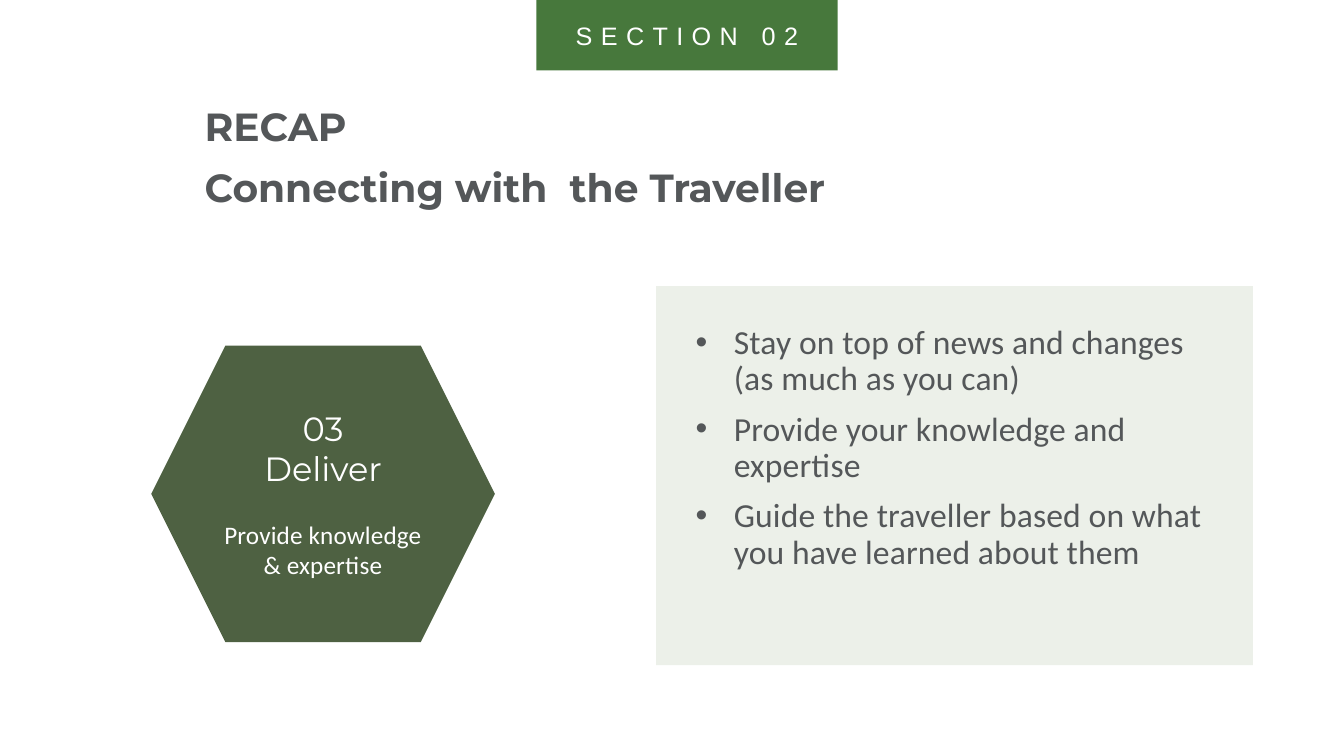
from lxml import etree
from pptx import Presentation
from pptx import util as u
from pptx.dml.color import RGBColor
from pptx.enum import shapes, text
from pptx.oxml.ns import qn

COLUMN = ROW = u.Inches(0.1)
SLIDE_COLUMNS, SLIDE_ROWS = 133.33, 75
WHITE, SLATE = "FFFFFF", "545759"
FOREST, GREEN, MIST = "4E6142", "47783C", "ECF0E9"


def colour(value):
    return RGBColor.from_string(value)


def grid(left, top, width, height):
    return [int(size) for size in (left * COLUMN, top * ROW, width * COLUMN, height * ROW)]


def add_panel(page, kind, box, fill):
    panel = page.shapes.add_shape(kind, *box)
    panel.shadow.inherit = False
    panel.fill.solid()
    panel.fill.fore_color.rgb = colour(fill)
    panel.line.fill.background()
    return panel


def set_frame(frame, anchor, inset=None):
    frame.word_wrap = True
    frame.vertical_anchor = anchor
    if inset is not None:
        margin = int(inset * COLUMN)
        frame.margin_left = frame.margin_right = margin
        frame.margin_top = frame.margin_bottom = margin


def style(para, font, size, ink, align, bold=False, tracking=0):
    para.alignment = align
    for span in para.runs:
        span.font.name = font
        span.font.size = u.Pt(size)
        span.font.bold = bold
        span.font.color.rgb = colour(ink)
        if tracking:
            span.font._element.set("spc", str(int(tracking * 100)))


def space_between(frame, points):
    for para in frame.paragraphs[1:]:
        para.space_before = u.Pt(points)


def add_bullet(para, indent):
    props = para._p.get_or_add_pPr()
    props.set("marL", str(int(indent * COLUMN)))
    props.set("indent", str(-int(indent * COLUMN)))
    etree.SubElement(props, qn("a:buFont")).set("typeface", "Arial")
    etree.SubElement(props, qn("a:buChar")).set("char", "•")


def section_tab(page, box, label):
    frame = add_panel(page, shapes.MSO_SHAPE.RECTANGLE, box, GREEN).text_frame
    set_frame(frame, text.MSO_ANCHOR.MIDDLE, 2)
    frame.text = label
    style(frame.paragraphs[0], "Arial", 18, WHITE, text.PP_ALIGN.CENTER, tracking=6)


def heading(page, box, lines):
    frame = page.shapes.add_textbox(*box).text_frame
    set_frame(frame, text.MSO_ANCHOR.TOP, 3.1)
    frame.text = "\n".join(lines)
    for para in frame.paragraphs:
        style(para, "Montserrat", 28, SLATE, text.PP_ALIGN.LEFT, bold=True)
    space_between(frame, 10)


def step_hexagon(page, box, number, name, summary):
    frame = add_panel(page, shapes.MSO_SHAPE.HEXAGON, box, FOREST).text_frame
    set_frame(frame, text.MSO_ANCHOR.MIDDLE)
    frame.text = "\n".join((number, name, summary))
    *titles, detail = frame.paragraphs
    for para in titles:
        style(para, "Montserrat", 24, WHITE, text.PP_ALIGN.CENTER)
    style(detail, "Calibri", 18, WHITE, text.PP_ALIGN.CENTER, tracking=0.1)
    detail.space_before = u.Pt(22)


def advice_panel(page, box, points):
    frame = add_panel(page, shapes.MSO_SHAPE.RECTANGLE, box, MIST).text_frame
    set_frame(frame, text.MSO_ANCHOR.TOP, 3.9)
    frame.text = "\n".join(points)
    for para in frame.paragraphs:
        add_bullet(para, 3.8)
        para.line_spacing = 0.9
        style(para, "Calibri", 24, SLATE, text.PP_ALIGN.LEFT, tracking=0.1)
    space_between(frame, 10)


def main():
    deck = Presentation()
    deck.slide_width = int(SLIDE_COLUMNS * COLUMN)
    deck.slide_height = int(SLIDE_ROWS * ROW)
    page = deck.slides.add_slide(deck.slide_layouts[6])
    step_hexagon(page, grid(15, 34.3, 34.1, 29.4),
                 "03", "Deliver", "Provide knowledge & expertise")
    heading(page, grid(17.2, 7, 69.1, 21.9),
            ["RECAP", "Connecting with  the Traveller"])
    advice_panel(page, grid(65.1, 28.4, 59.2, 37.6), [
        "Stay on top of news and changes (as much as you can)",
        "Provide your knowledge and expertise",
        "Guide the traveller based on what you have learned about them",
    ])
    section_tab(page, grid(53.2, 0, 29.9, 7), "SECTION 02")
    deck.save("out.pptx")


if __name__ == "__main__":
    main()
